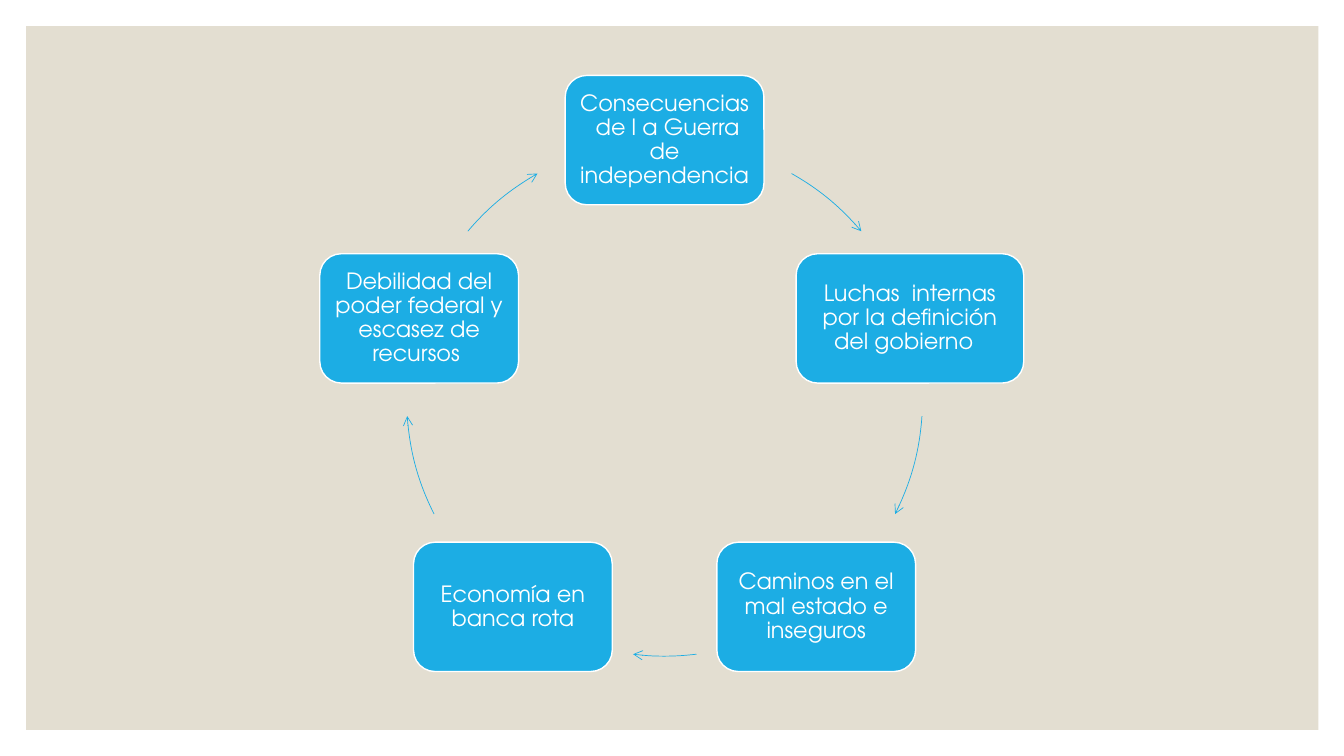
from math import cos, radians, sin

from lxml import etree
from pptx import Presentation
from pptx.dml.color import RGBColor
from pptx.enum.shapes import MSO_SHAPE as Preset
from pptx.enum.text import MSO_ANCHOR as Anchor, PP_ALIGN as Align
from pptx.oxml.ns import qn
from pptx.util import Pt

FONT = "TeX Gyre Adventor"
WHITE, BLUE, SAND = "FFFFFF", "1CADE4", "E3DED1"
STEP_HEIGHT = 92.4

# Step text, box width
STEPS = [
    ("Consecuencias  de l a Guerra de independencia ", 142),
    ("Luchas  internas por la definición del gobierno  ", 162.6),
    ("Caminos en el mal estado e inseguros", 142),
    ("Economía en banca rota", 142),
    ("Debilidad del poder federal y escasez de recursos ", 142),
]
# Start and end of each arrow, in degrees clockwise from the right
ARROWS = [(299.5, 319.7), (4, 26.7), (82.9, 97), (153.3, 176), (220.3, 240.5)]


def color(value):
    return RGBColor.from_string(value)


def add_panel(page, left, top, width, height):
    panel = page.shapes.add_shape(
        Preset.RECTANGLE, Pt(left), Pt(top), Pt(width), Pt(height))
    panel.shadow.inherit = False
    panel.fill.solid()
    panel.fill.fore_color.rgb = color(SAND)
    panel.line.fill.background()


def add_step(page, center_x, center_y, width, text):
    box = page.shapes.add_shape(
        Preset.ROUNDED_RECTANGLE, Pt(center_x - width / 2),
        Pt(center_y - STEP_HEIGHT / 2), Pt(width), Pt(STEP_HEIGHT))
    box.shadow.inherit = False
    box.fill.solid()
    box.fill.fore_color.rgb = color(BLUE)
    box.line.color.rgb = color(WHITE)
    box.line.width = Pt(1)

    frame = box.text_frame
    frame.word_wrap = True
    frame.vertical_anchor = Anchor.MIDDLE
    frame.margin_left = frame.margin_right = Pt(4.8)
    frame.margin_top = frame.margin_bottom = Pt(4.8)
    para = frame.paragraphs[0]
    para.text = text
    para.alignment = Align.CENTER
    para.line_spacing = 0.9
    para.font.name = FONT
    para.font.size = Pt(16)
    para.font.color.rgb = color(WHITE)


def add_arc_arrow(page, left, top, size, start, end):
    arc = page.shapes.add_shape(
        Preset.ARC, Pt(left), Pt(top), Pt(size), Pt(size))
    arc.shadow.inherit = False
    # Adjustments are in units of 100000; a degree is 60000
    arc.adjustments[0] = start * 0.6
    arc.adjustments[1] = end * 0.6
    arc.fill.background()
    arc.line.color.rgb = color(BLUE)
    arc.line.width = Pt(0.5)
    outline = arc.line._get_or_add_ln()
    etree.SubElement(outline, qn("a:tailEnd"), type="arrow")


def add_cycle(page, left, top, size):
    radius = size / 2
    for index, ((text, width), (start, end)) in enumerate(zip(STEPS, ARROWS)):
        angle = radians(index * 360 / len(STEPS) - 90)
        add_step(page, left + radius * (1 + cos(angle)),
                 top + radius * (1 + sin(angle)), width, text)
        add_arc_arrow(page, left, top, size, start, end)


def main():
    deck = Presentation()
    deck.slide_width, deck.slide_height = Pt(960), Pt(540)
    page = deck.slides.add_slide(deck.slide_layouts[6])
    add_panel(page, 18.7, 18.7, 923, 502.6)
    add_cycle(page, 290.4, 100.1, 368.6)
    deck.save("out.pptx")


if __name__ == "__main__":
    main()
